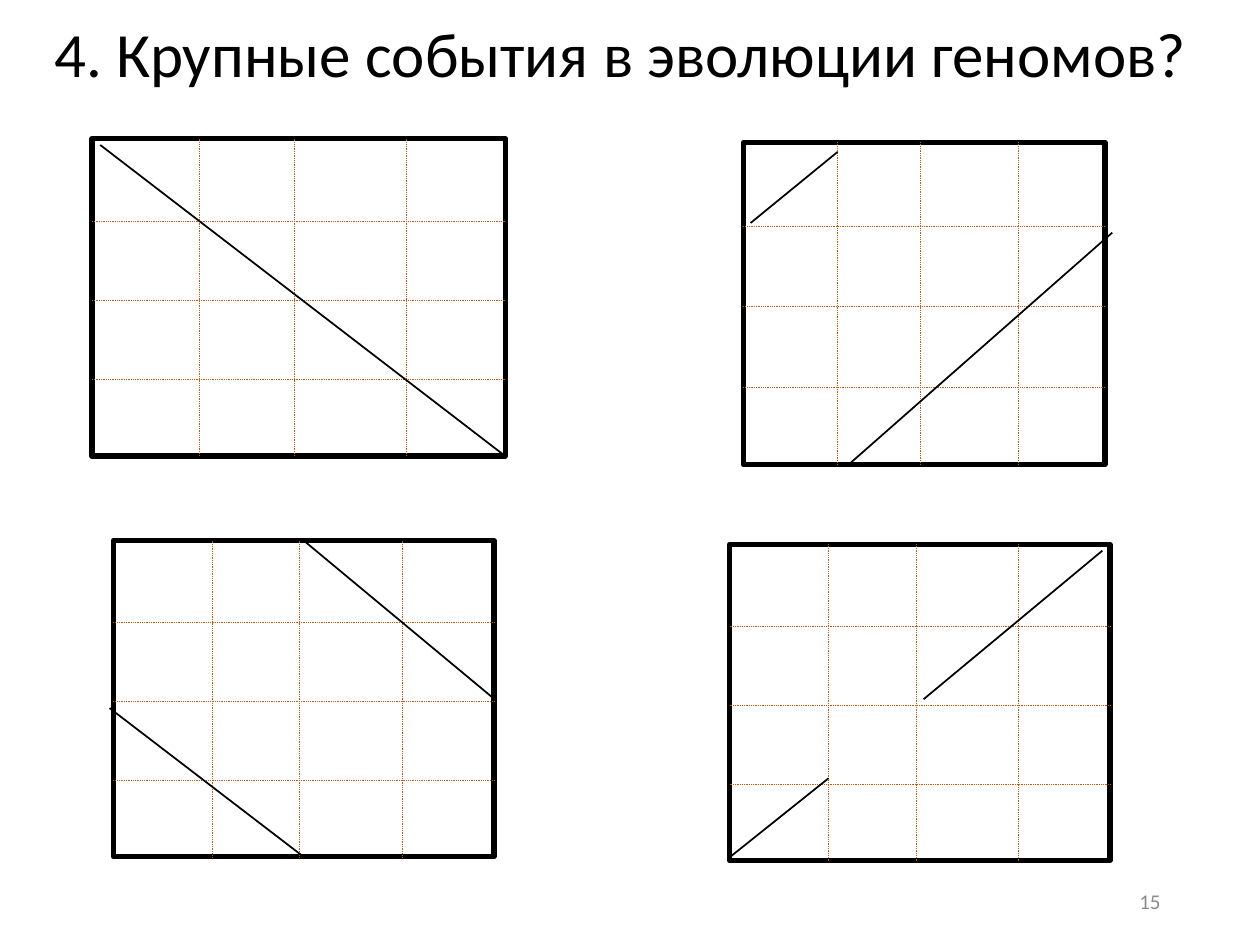
from lxml.etree import SubElement as Sub
from pptx import Presentation
from pptx.dml.color import RGBColor as Rgb
from pptx.enum.dml import MSO_LINE as Dash
from pptx.enum.shapes import MSO_CONNECTOR as Conn, MSO_SHAPE as Geo
from pptx.enum.text import MSO_ANCHOR as Anchor, MSO_AUTO_SIZE as Fit, PP_ALIGN as Align
from pptx.oxml.ns import qn
from pptx.util import Inches, Pt

HUES = {"ink": "000000", "grid": "C55A11", "grey": "8C8C8C"}
WIDE, HIGH = Inches(10), Inches(7.5)
COLS = (0.26, 0.49, 0.76)
ROWS = (0.26, 0.51, 0.76)
PLOTS = (
    ((0.73, 1.1, 3.28, 2.52), [(0.02, 0.02, 1, 1)]),
    ((5.9, 1.13, 2.87, 2.56), [(0.02, 0.25, 0.26, 0.03), (0.29, 1, 1.02, 0.28)]),
    ((0.9, 4.29, 3.02, 2.51), [(-0.01, 0.53, 0.5, 1), (0.5, 0, 1, 0.5)]),
    ((5.79, 4.32, 3.02, 2.51), [(0, 0.99, 0.26, 0.74), (0.51, 0.49, 0.98, 0.02)]),
)


def apply(item, form):
    """Set each attribute of the item from the format dict."""
    for key, val in form.items():
        setattr(item, key, val)


def paint(line, hue, form):
    """Colour a line and set its format."""
    line.color.rgb = Rgb.from_string(HUES[hue])
    apply(line, form)


def stroke(group, box, ends, hue, form):
    """Draw a line whose ends are shares of the box."""
    left, top, wide, high = box
    x1, y1, x2, y2 = ends
    spots = (left + x1 * wide, top + y1 * high, left + x2 * wide, top + y2 * high)
    line = group.shapes.add_connector(Conn.STRAIGHT, *map(Inches, spots))
    paint(line.line, hue, form)
    Sub(line._element.spPr, qn("a:effectLst"))


def plot(slide, box, paths):
    """Draw a framed dot plot with its grid and matching paths."""
    group = slide.shapes.add_group_shape()
    grid = [(x, 0, x, 1) for x in COLS] + [(0, y, 1, y) for y in ROWS]
    frame = group.shapes.add_shape(Geo.RECTANGLE, *map(Inches, box))
    frame.shadow.inherit = False
    frame.fill.background()
    paint(frame.line, "ink", {"width": Pt(3)})
    for ends in grid:
        stroke(group, box, ends, "grid", {"width": Pt(0.5), "dash_style": Dash.ROUND_DOT})
    for ends in paths:
        stroke(group, box, ends, "ink", {"width": Pt(1)})


def write(shape, box, text, hue, size, form):
    """Place a text shape and format its one paragraph."""
    names = ("left", "top", "width", "height")
    apply(shape, dict(zip(names, map(Inches, box))))
    frame = shape.text_frame
    frame.text = text
    apply(frame, {"word_wrap": True, "auto_size": Fit.NONE, "vertical_anchor": Anchor.MIDDLE})
    para = frame.paragraphs[0]
    apply(para, form)
    font = para.runs[0].font
    apply(font, {"name": "Calibri", "size": Pt(size)})
    font.color.rgb = Rgb.from_string(HUES[hue])


def main():
    """Build the slide and save it."""
    deck = Presentation()
    apply(deck, {"slide_width": WIDE, "slide_height": HIGH})
    slide = deck.slides.add_slide(deck.slide_layouts[5])
    write(slide.shapes.title, (0.33, 0.03, 9.73, 0.85),
          "4. Крупные события в эволюции геномов?", "ink", 36,
          {"alignment": Align.LEFT, "line_spacing": 0.9})
    for box, paths in PLOTS:
        plot(slide, box, paths)
    page = (7.06, 6.95, 2.25, 0.4)
    write(slide.shapes.add_textbox(*map(Inches, page)), page, "15", "grey", 12,
          {"alignment": Align.RIGHT})
    deck.save("out.pptx")


if __name__ == "__main__":
    main()
